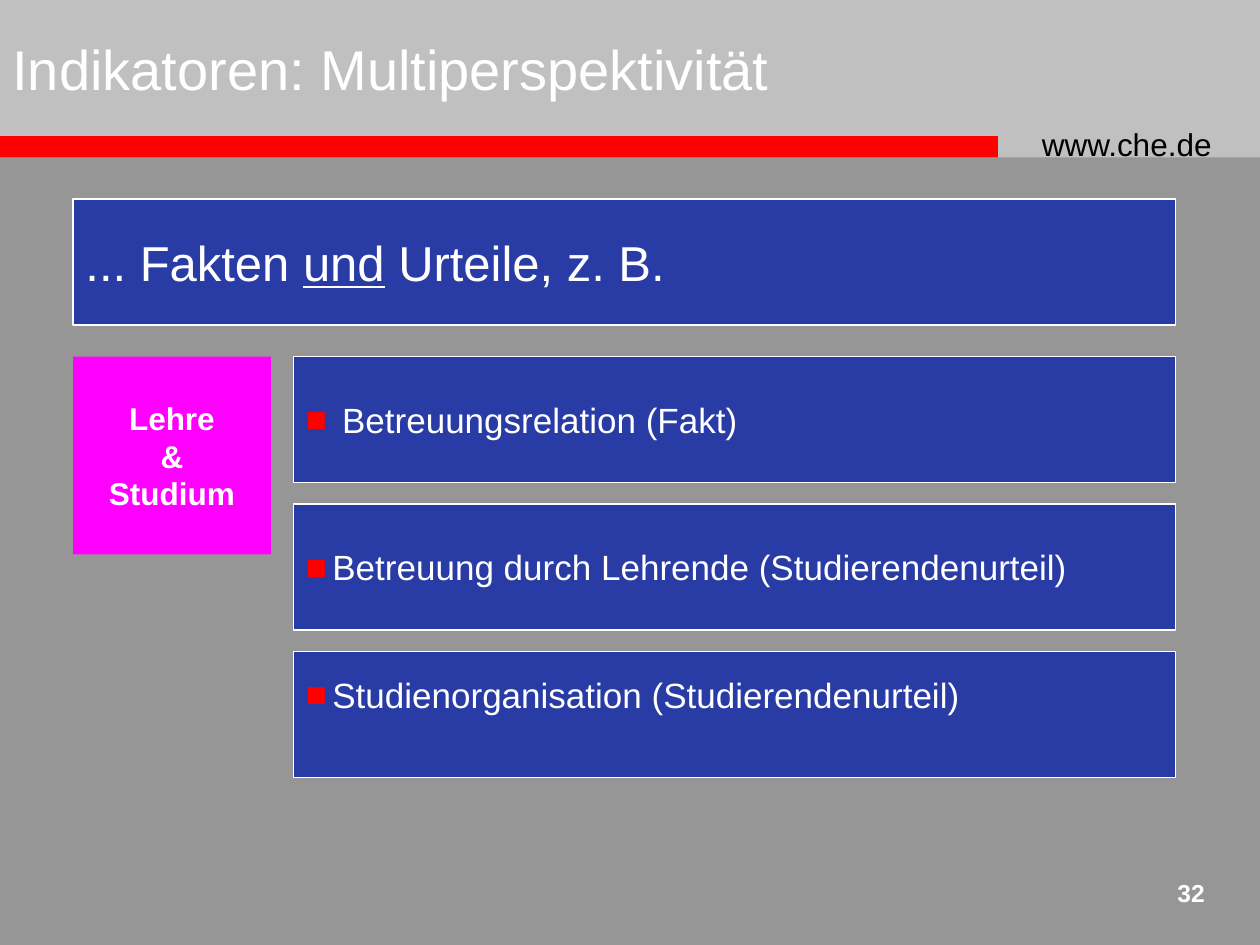
from dataclasses import dataclass

from lxml.etree import SubElement
from pptx import Presentation
from pptx.dml.color import RGBColor
from pptx.enum.shapes import MSO_SHAPE
from pptx.enum.text import MSO_ANCHOR, PP_ALIGN
from pptx.oxml.ns import qn
from pptx.util import Inches, Pt


@dataclass(frozen=True)
class Theme:
    font: str = "Arial"
    background: str = "969696"
    header: str = "C0C0C0"
    accent: str = "FF0000"
    panel: str = "293BA5"
    topic: str = "FF00FF"
    light: str = "FFFFFF"
    dark: str = "000000"
    title_size: int = 32
    lead_size: int = 28
    item_size: int = 20
    label_size: int = 18
    number_size: int = 14


THEME = Theme()


def rgb(color):
    return RGBColor.from_string(color)


def add_box(slide, left, top, width, height, fill, line=None):
    s = slide.shapes.add_shape(MSO_SHAPE.RECTANGLE, Inches(left), Inches(top),
                               Inches(width), Inches(height))
    s.shadow.inherit = False
    s.fill.solid()
    s.fill.fore_color.rgb = rgb(fill)
    if line:
        s.line.color.rgb = rgb(line)
        s.line.width = Pt(0.75)
    else:
        s.line.fill.background()
    return s


def add_text_box(slide, left, top, width, height):
    return slide.shapes.add_textbox(Inches(left), Inches(top), Inches(width), Inches(height))


def add_run(p, text, size, color=THEME.light, bold=False, underline=False):
    r = p.add_run()
    r.text = text
    r.font.name = THEME.font
    r.font.size = Pt(size)
    r.font.color.rgb = rgb(color)
    r.font.bold = bold
    r.font.underline = underline


def first_paragraph(s, align=PP_ALIGN.LEFT, anchor=MSO_ANCHOR.MIDDLE):
    tf = s.text_frame
    tf.word_wrap = True
    tf.vertical_anchor = anchor
    p = tf.paragraphs[0]
    p.alignment = align
    return p


def add_bullet(p):
    """Give the paragraph a hanging square in the accent colour."""
    pPr = p._p.get_or_add_pPr()
    indent = Inches(0.21)
    pPr.set("marL", str(indent))
    pPr.set("indent", str(-indent))
    color = SubElement(pPr, qn("a:buClr"))
    SubElement(color, qn("a:srgbClr"), val=THEME.accent)
    SubElement(pPr, qn("a:buFont"), typeface=THEME.font)
    SubElement(pPr, qn("a:buChar"), char="■")


def add_header(slide):
    add_box(slide, 0, 0, 10, 1.25, THEME.header)
    add_box(slide, 0, 1.08, 7.92, 0.17, THEME.accent)
    p = first_paragraph(add_text_box(slide, 8.17, 0.94, 1.75, 0.4), anchor=MSO_ANCHOR.TOP)
    add_run(p, "www.che.de", THEME.label_size, THEME.dark)
    p = first_paragraph(add_text_box(slide, 0, 0, 8.08, 1.08))
    add_run(p, "Indikatoren: Multiperspektivität", THEME.title_size)


def add_lead(slide):
    p = first_paragraph(add_box(slide, 0.58, 1.58, 8.75, 1, THEME.panel, THEME.light))
    add_run(p, "... Fakten ", THEME.lead_size)
    add_run(p, "und", THEME.lead_size, underline=True)
    add_run(p, " Urteile, z. B.", THEME.lead_size)


def add_topic(slide, lines):
    s = add_box(slide, 0.58, 2.83, 1.57, 1.57, THEME.topic)
    p = first_paragraph(s, PP_ALIGN.CENTER)
    for i, line in enumerate(lines):
        if i:
            p = s.text_frame.add_paragraph()
            p.alignment = PP_ALIGN.CENTER
        add_run(p, line, THEME.label_size, bold=True)


def add_indicator(slide, top, text):
    s = add_box(slide, 2.33, top, 7, 1, THEME.panel, THEME.light)
    p = first_paragraph(s)
    add_bullet(p)
    add_run(p, text, THEME.item_size)
    return s


def add_slide_number(slide, number):
    s = add_text_box(slide, 9.08, 6.92, 0.58, 0.42)
    p = first_paragraph(s, PP_ALIGN.RIGHT, MSO_ANCHOR.TOP)
    add_run(p, number, THEME.number_size, bold=True)


def main():
    prs = Presentation()
    prs.slide_width, prs.slide_height = Inches(10), Inches(7.5)
    slide = prs.slides.add_slide(prs.slide_layouts[6])
    slide.background.fill.solid()
    slide.background.fill.fore_color.rgb = rgb(THEME.background)

    add_header(slide)
    add_lead(slide)
    add_topic(slide, ["Lehre", "&", "Studium"])
    indicators = [
        " Betreuungsrelation (Fakt)",
        "Betreuung durch Lehrende (Studierendenurteil)",
        "Studienorganisation (Studierendenurteil)",
    ]
    boxes = [add_indicator(slide, 2.83 + 1.17 * i, text) for i, text in enumerate(indicators)]
    # The last indicator sits half a line above the middle of its box.
    boxes[-1].text_frame.margin_bottom = Inches(0.37)
    add_slide_number(slide, "32")
    prs.save("out.pptx")


if __name__ == "__main__":
    main()
